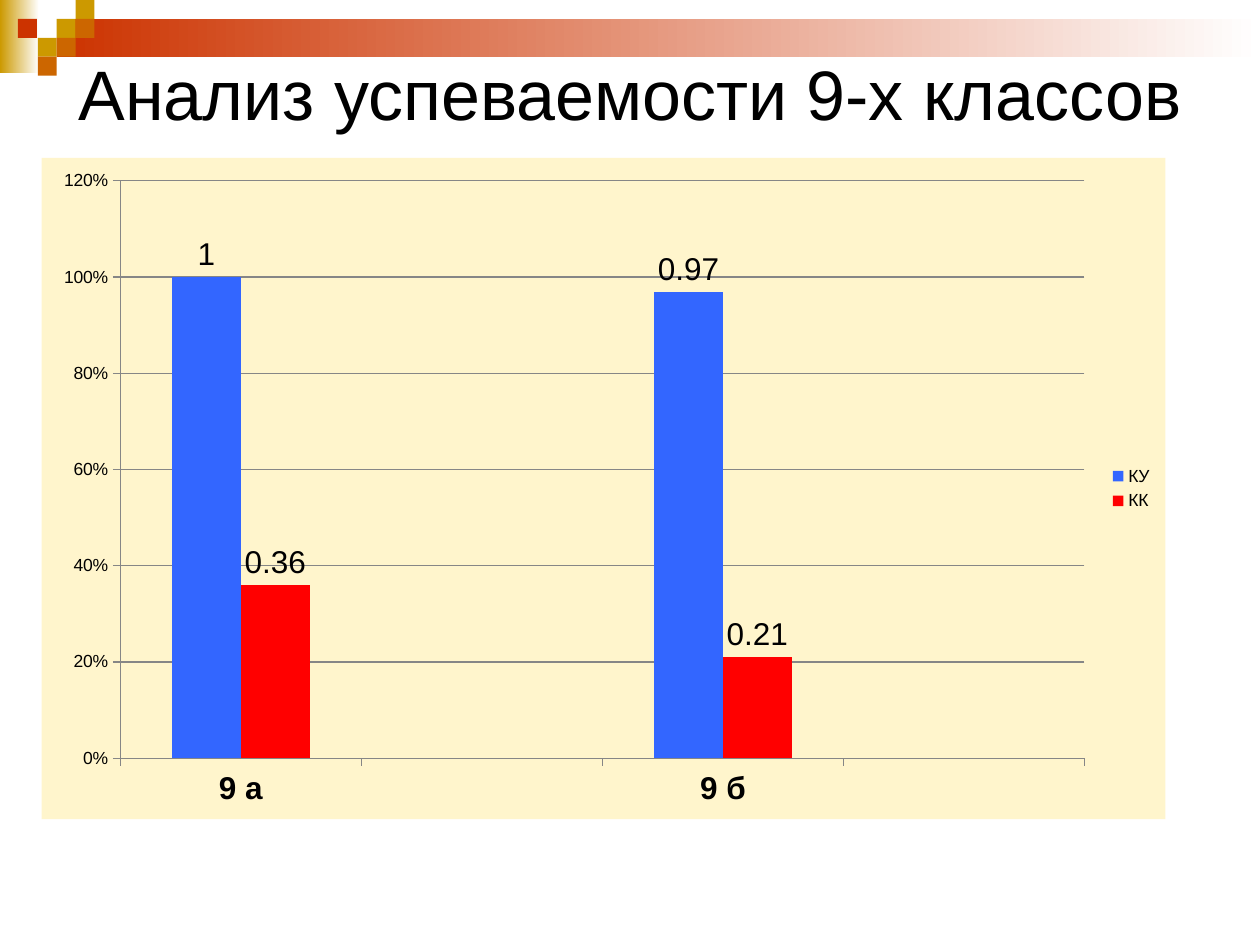
from lxml import etree
from pptx import Presentation
from pptx.chart.data import CategoryChartData
from pptx.dml.color import RGBColor
from pptx.enum.chart import XL_CHART_TYPE as ChartType, XL_LABEL_POSITION as LabelPos
from pptx.enum.chart import XL_LEGEND_POSITION as LegendPos, XL_TICK_MARK as Tick
from pptx.enum.shapes import MSO_SHAPE as Shape
from pptx.enum.text import MSO_ANCHOR as Anchor, PP_ALIGN as Align
from pptx.oxml import parse_xml
from pptx.oxml.ns import nsdecls, qn
from pptx.util import Inches, Pt

CELL = 0.15  # inches, side of one square of the corner mosaic


def rgb(hex_text):
    return RGBColor.from_string(hex_text)


class Deck:
    font, ink, grid_color = "Arial", "000000", "868686"
    gold, orange, red, white = "CC9900", "CC6600", "CC3300", "FFFFFF"

    def __init__(self):
        self.prs = Presentation()
        self.prs.slide_width, self.prs.slide_height = Inches(10), Inches(7.5)
        self.s = self.prs.slides.add_slide(self.prs.slide_layouts[6])

    def share(self, x, y, w, h):
        """Turn shares of the slide's size into lengths."""
        width, height = self.prs.slide_width, self.prs.slide_height
        return [int(v) for v in (x * width, y * height, w * width, h * height)]

    def rect(self, col, row, cols, rows, *colors):
        """Place a rectangle on the mosaic grid; two colours make a gradient."""
        box = [Inches(v * CELL) for v in (col, row, cols, rows)]
        sp = self.s.shapes.add_shape(Shape.RECTANGLE, *box)
        sp.shadow.inherit = False
        sp.line.fill.background()
        if len(colors) == 1:
            sp.fill.solid()
            sp.fill.fore_color.rgb = rgb(colors[0])
            return
        sp.fill.gradient()
        sp.fill.gradient_angle = 0
        for stop, color in zip(sp.fill.gradient_stops, colors):
            stop.color.rgb = rgb(color)

    def title(self, text, box, size):
        tf = self.s.shapes.add_textbox(*self.share(*box)).text_frame
        tf.word_wrap = True
        tf.vertical_anchor = Anchor.MIDDLE
        tf.margin_top = tf.margin_bottom = 0
        p = tf.paragraphs[0]
        p.alignment = Align.CENTER
        r = p.add_run()
        r.text = text
        self.style(r.font, size)

    def style(self, font, size, bold=False):
        font.name, font.size, font.bold = self.font, Pt(size), bold
        font.color.rgb = rgb(self.ink)

    def columns(self, cats, series, box, back, plot):
        """Draw clustered columns; series maps a name to (values, colour)."""
        data = CategoryChartData(number_format="General")
        data.categories = cats
        for name, (values, _) in series.items():
            data.add_series(name, values)
        chart = self.s.shapes.add_chart(
            ChartType.COLUMN_CLUSTERED, *self.share(*box), data).chart
        self.style(chart.font, 10)
        chart.has_title = False
        chart.has_legend = True
        chart.legend.position = LegendPos.RIGHT
        chart.legend.include_in_layout = False
        self.style(chart.legend.font, 10)
        self.axes(chart)

        bars = chart.plots[0]
        bars.gap_width, bars.overlap, bars.vary_by_categories = 150, 0, False
        for ser, (_, color) in zip(bars.series, series.values()):
            ser.format.fill.solid()
            ser.format.fill.fore_color.rgb = rgb(color)
            labels = ser.data_labels
            labels.show_value = True
            labels.number_format, labels.number_format_is_linked = "General", False
            labels.position = LabelPos.OUTSIDE_END
            self.style(labels.font, 18)
        self.chart_back(chart, back)
        self.plot_layout(chart, plot)

    def axes(self, chart):
        cat, val = chart.category_axis, chart.value_axis
        val.minimum_scale, val.maximum_scale, val.major_unit = 0, 1.2, 0.2
        val.has_major_gridlines = True
        val.tick_labels.number_format = "0%"
        val.tick_labels.number_format_is_linked = False
        cat.major_tick_mark = val.major_tick_mark = Tick.OUTSIDE
        self.style(cat.tick_labels.font, 18, bold=True)
        self.style(val.tick_labels.font, 10)
        for part in (cat, val, val.major_gridlines):
            part.format.line.color.rgb = rgb(self.grid_color)
            part.format.line.width = Pt(0.75)

    def chart_back(self, chart, color):
        sp_pr = parse_xml(
            f'<c:spPr {nsdecls("c", "a")}><a:solidFill><a:srgbClr val="{color}"/>'
            '</a:solidFill><a:ln><a:noFill/></a:ln></c:spPr>')
        chart.element.find(qn("c:chart")).addnext(sp_pr)

    def plot_layout(self, chart, plot):
        """Fix the inner plot area, given as shares of the chart."""
        area = chart.element.find(".//" + qn("c:plotArea"))
        for old in area.findall(qn("c:layout")):
            area.remove(old)
        layout = etree.Element(qn("c:layout"))
        manual = etree.SubElement(layout, qn("c:manualLayout"))
        values = ("inner", "edge", "edge", *plot)
        tags = ("layoutTarget", "xMode", "yMode", "x", "y", "w", "h")
        for tag, value in zip(tags, values):
            etree.SubElement(manual, qn("c:" + tag)).set("val", str(value))
        area.insert(0, layout)


def main():
    deck = Deck()
    deck.rect(0, 0, 2.07, 3.87, deck.gold, deck.white)
    deck.rect(3, 1, 63.67, 2, deck.red, deck.white)
    mosaic = {
        deck.gold: [(3, 1), (4, 0), (2, 2)],
        deck.orange: [(4, 1), (3, 2), (2, 3)],
        deck.red: [(0.95, 1)],
    }
    for color, cells in mosaic.items():
        for col, row in cells:
            deck.rect(col, row, 1, 1, color)

    deck.title("Анализ успеваемости 9-х классов", (0, 0.056, 1, 0.083), 40)
    deck.columns(
        ["9 а", "", "9 б", ""],
        {"КУ": ([1, None, 0.97, None], "3366FF"),
         "КК": ([0.36, None, 0.21, None], "FF0000")},
        box=(0.033, 0.167, 0.892, 0.7), back="FFF5CC",
        plot=(0.07, 0.035, 0.858, 0.873))
    deck.prs.save("out.pptx")


if __name__ == "__main__":
    main()
